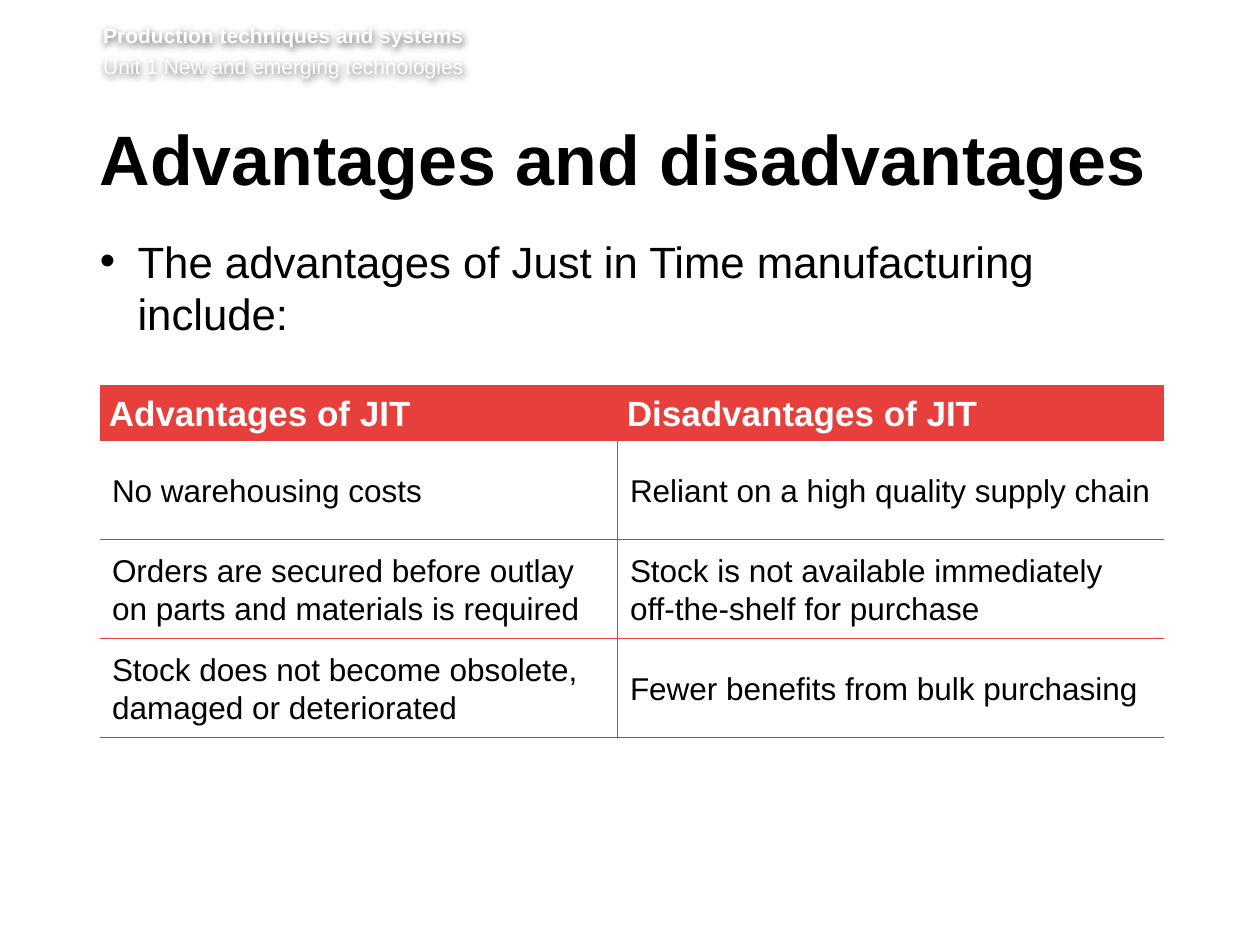
from lxml.etree import SubElement
from pptx import Presentation
from pptx.dml.color import RGBColor
from pptx.enum.text import MSO_ANCHOR as Anchor, MSO_AUTO_SIZE as AutoSize, PP_ALIGN as Align
from pptx.oxml import parse_xml
from pptx.oxml.ns import nsdecls, qn
from pptx.util import Pt

COLORS = {"text": "000000", "light": "FFFFFF", "accent": "E7403C", "rule": "666666"}
FONT = "Arial"
LEFT = 57

COLUMN_WIDTHS = (296, 312)
HEADER_HEIGHT, ROW_HEIGHT = 31.8, 56.6
ROWS = (
    ("Advantages of JIT", "Disadvantages of JIT"),
    ("No warehousing costs", "Reliant on a high quality supply chain"),
    ("Orders are secured before outlay on parts and materials is required",
     "Stock is not available immediately off-the-shelf for purchase"),
    ("Stock does not become obsolete, damaged or deteriorated",
     "Fewer benefits from bulk purchasing"),
)
ROW_RULES = ("accent", "rule", "accent", "rule")


class SlideBuilder:
    def __init__(self, slide):
        self.slide = slide

    def place(self, shape, left, top, width, height):
        shape.left, shape.top = Pt(left), Pt(top)
        shape.width, shape.height = Pt(width), Pt(height)

    def frame(self, shape, margins):
        frame = shape.text_frame
        frame.word_wrap = True
        frame.auto_size = AutoSize.NONE
        frame.vertical_anchor = Anchor.TOP
        (frame.margin_left, frame.margin_top,
         frame.margin_right, frame.margin_bottom) = map(Pt, margins)
        return frame

    def add_text(self, paragraph, text, size, color="text", bold=False):
        paragraph.alignment = Align.LEFT
        paragraph.space_before = Pt(0)
        run = paragraph.add_run()
        run.text = text
        font = run.font
        font.name, font.size, font.bold = FONT, Pt(size), bold
        font.color.rgb = RGBColor.from_string(COLORS[color])

    def unit_header(self, unit, topic):
        box = self.slide.shapes.add_textbox(Pt(LEFT + 2), Pt(13), Pt(635), Pt(35))
        frame = self.frame(box, (0, 0, 0, 3.6))
        self.add_text(frame.paragraphs[0], unit, 12, "light", bold=True)
        second = frame.add_paragraph()
        self.add_text(second, topic, 12, "light")
        second.space_before = Pt(3)
        box._element.spPr.append(parse_xml(
            f'<a:effectLst {nsdecls("a")}>'
            f'<a:outerShdw blurRad="{Pt(4)}" dist="{Pt(1)}" dir="5400000" algn="t" rotWithShape="0">'
            f'<a:srgbClr val="{COLORS["text"]}"><a:alpha val="60000"/></a:srgbClr>'
            '</a:outerShdw></a:effectLst>'))

    def title(self, text):
        shape = self.slide.shapes.title
        self.place(shape, LEFT, 71.3, 616, 52.5)
        paragraph = self.frame(shape, (0, 3.6, 7.2, 3.6)).paragraphs[0]
        self.add_text(paragraph, text, 40, bold=True)
        paragraph.line_spacing, paragraph.space_after = Pt(39), Pt(15)

    def bullet(self, text):
        shape = self.slide.placeholders[1]
        self.place(shape, LEFT, 134, 614, 272)
        paragraph = self.frame(shape, (0, 0, 7.2, 3.6)).paragraphs[0]
        properties = paragraph._p.get_or_add_pPr()
        properties.set("marL", str(Pt(21.6)))
        properties.set("indent", str(Pt(-21.6)))
        SubElement(properties, qn("a:buFont")).set("typeface", FONT)
        SubElement(properties, qn("a:buChar")).set("char", "•")
        self.add_text(paragraph, text, 25)
        paragraph.line_spacing, paragraph.space_after = Pt(30), Pt(14)

    def border(self, cell, edge, color, width):
        line = SubElement(cell._tc.get_or_add_tcPr(), qn(f"a:{edge}"), w=str(Pt(width)))
        if color is None:
            SubElement(line, qn("a:noFill"))
        else:
            fill = SubElement(line, qn("a:solidFill"))
            SubElement(fill, qn("a:srgbClr")).set("val", COLORS[color])

    def cell(self, cell, text, row, column):
        header = row == 0
        above = "accent" if header else ROW_RULES[row - 1]
        self.border(cell, "lnL", "accent" if column else None, 1)
        self.border(cell, "lnR", None if column else "accent", 1)
        self.border(cell, "lnT", above, 0.5)
        self.border(cell, "lnB", ROW_RULES[row], 0.5)
        if header:
            cell.fill.solid()
            cell.fill.fore_color.rgb = RGBColor.from_string(COLORS["accent"])
        else:
            cell.fill.background()
        cell.margin_left = cell.margin_right = Pt(5.2)
        cell.margin_top = cell.margin_bottom = Pt(0)
        cell.vertical_anchor = Anchor.MIDDLE
        paragraph = cell.text_frame.paragraphs[0]
        if header:
            self.add_text(paragraph, text, 20, "light", bold=True)
        else:
            paragraph._p.get_or_add_pPr().set("marL", str(Pt(1.8)))
            self.add_text(paragraph, text, 18)
        paragraph.line_spacing, paragraph.space_after = 1.07, Pt(6)

    def table(self, rows):
        height = HEADER_HEIGHT + ROW_HEIGHT * (len(rows) - 1)
        table = self.slide.shapes.add_table(
            len(rows), len(COLUMN_WIDTHS), Pt(LEFT), Pt(220),
            Pt(sum(COLUMN_WIDTHS)), Pt(height)).table
        table.horz_banding = False
        for column, width in zip(table.columns, COLUMN_WIDTHS):
            column.width = Pt(width)
        for row, texts in enumerate(rows):
            table.rows[row].height = Pt(ROW_HEIGHT if row else HEADER_HEIGHT)
            for column, text in enumerate(texts):
                self.cell(table.cell(row, column), text, row, column)


def main():
    presentation = Presentation()
    presentation.slide_width, presentation.slide_height = Pt(720), Pt(540)
    builder = SlideBuilder(presentation.slides.add_slide(presentation.slide_layouts[1]))
    builder.unit_header("Production techniques and systems",
                        "Unit 1 New and emerging technologies")
    builder.title("Advantages and disadvantages")
    builder.bullet("The advantages of Just in Time manufacturing include:")
    builder.table(ROWS)
    presentation.save("out.pptx")


if __name__ == "__main__":
    main()
